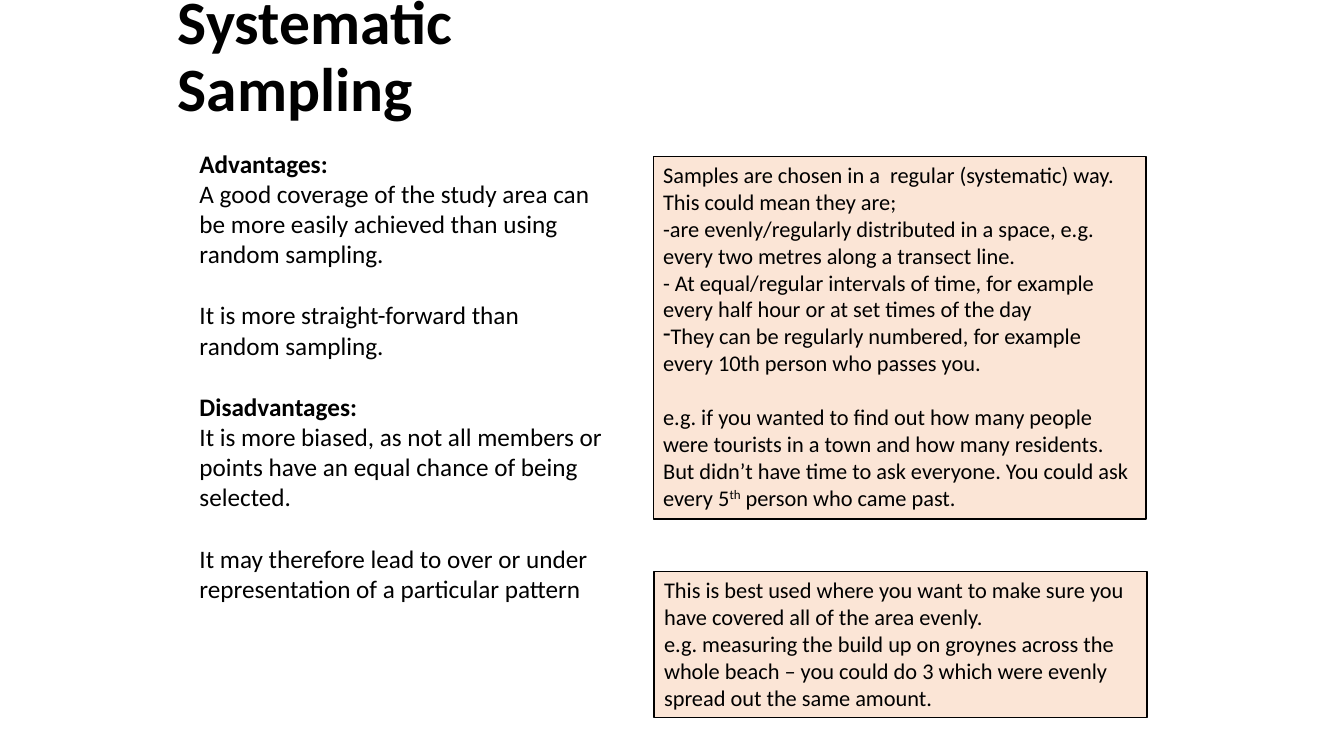
from dataclasses import dataclass

from lxml.etree import SubElement
from pptx import Presentation
from pptx.dml.color import RGBColor as RGB
from pptx.enum.shapes import MSO_SHAPE as SHAPE
from pptx.enum.text import MSO_ANCHOR as ANCHOR, MSO_AUTO_SIZE as AUTO, PP_ALIGN as ALIGN
from pptx.oxml.ns import qn
from pptx.util import Pt


@dataclass(frozen=True)
class Theme:
    font: str = "Calibri"
    ink: RGB = RGB(0, 0, 0)
    panel: RGB = RGB(0xFB, 0xE5, 0xD6)
    title: int = 44
    body: int = 18
    note: int = 16


theme = Theme()
LINE_HEIGHT = 1.22  # Calibri line height per point of type size


def add_text(tf, text, size, bold=False, gap=False, spacing=None, bullet=None):
    """Add one paragraph; a part between ^ marks is superscript."""
    p = tf.paragraphs[0] if not tf.text else tf.add_paragraph()
    p.alignment = ALIGN.LEFT
    if spacing:
        p.line_spacing = spacing
    if gap:
        p.space_before = Pt(round(size * LINE_HEIGHT, 1))
    if bullet:
        SubElement(p._p.get_or_add_pPr(), qn("a:buChar")).set("char", bullet)
    for i, part in enumerate(text.split("^")):
        r = p.add_run()
        r.text = part
        r.font.name, r.font.size, r.font.bold = theme.font, Pt(size), bold
        r.font.color.rgb = theme.ink
        if i % 2:
            r.font._element.set("baseline", "30000")


prs = Presentation()
prs.slide_width, prs.slide_height = Pt(960), Pt(540)
s = prs.slides.add_slide(prs.slide_layouts[6])

# Title
tf = s.shapes.add_textbox(Pt(120), Pt(0), Pt(376), Pt(83)).text_frame
tf.word_wrap = True
tf.vertical_anchor = ANCHOR.MIDDLE
add_text(tf, "Systematic Sampling", theme.title, bold=True, spacing=0.9)

# Shaded panels: what the method is, and when to use it
panels = [
    (466.6, 111.6, 259.2, [
        ("Samples are chosen in a  regular (systematic) way.", {}),
        ("This could mean they are;", {}),
        ("-are evenly/regularly distributed in a space, e.g. every two metres along a transect line.", {}),
        ("- At equal/regular intervals of time, for example every half hour or at set times of the day", {}),
        ("They can be regularly numbered, for example every 10th person who passes you.", {"bullet": "-"}),
        ("e.g. if you wanted to find out how many people were tourists in a town and how many "
         "residents. But didn’t have time to ask everyone. You could ask every 5^th^ person who "
         "came past.", {"gap": True}),
    ]),
    (467.3, 408.2, 104.4, [
        ("This is best used where you want to make sure you have covered all of the area evenly.", {}),
        ("e.g. measuring the build up on groynes across the whole beach – you could do 3 which "
         "were evenly spread out the same amount.", {}),
    ]),
]
for left, top, height, paragraphs in panels:
    sp = s.shapes.add_shape(SHAPE.RECTANGLE, Pt(left), Pt(top), Pt(352), Pt(height))
    sp.shadow.inherit = False
    sp.fill.solid()
    sp.fill.fore_color.rgb = theme.panel
    sp.line.color.rgb = theme.ink
    sp.line.width = Pt(1)
    tf = sp.text_frame
    tf.word_wrap = True
    tf.vertical_anchor = ANCHOR.TOP
    tf.auto_size = AUTO.SHAPE_TO_FIT_TEXT
    for text, options in paragraphs:
        add_text(tf, text, theme.note, **options)

# Advantages and disadvantages
tf = s.shapes.add_textbox(Pt(135.4), Pt(102.2), Pt(303.8), Pt(356.4)).text_frame
tf.word_wrap = True
tf.auto_size = AUTO.SHAPE_TO_FIT_TEXT
for text, options in [
    ("Advantages:", {"bold": True}),
    ("A good coverage of the study area can be more easily achieved than using random sampling.", {}),
    ("It is more straight-forward than random sampling.", {"gap": True}),
    ("Disadvantages:", {"bold": True, "gap": True}),
    ("It is more biased, as not all members or points have an equal chance of being selected.", {}),
    ("It may therefore lead to over or under representation of a particular pattern", {"gap": True}),
]:
    add_text(tf, text, theme.body, **options)

prs.save("out.pptx")
